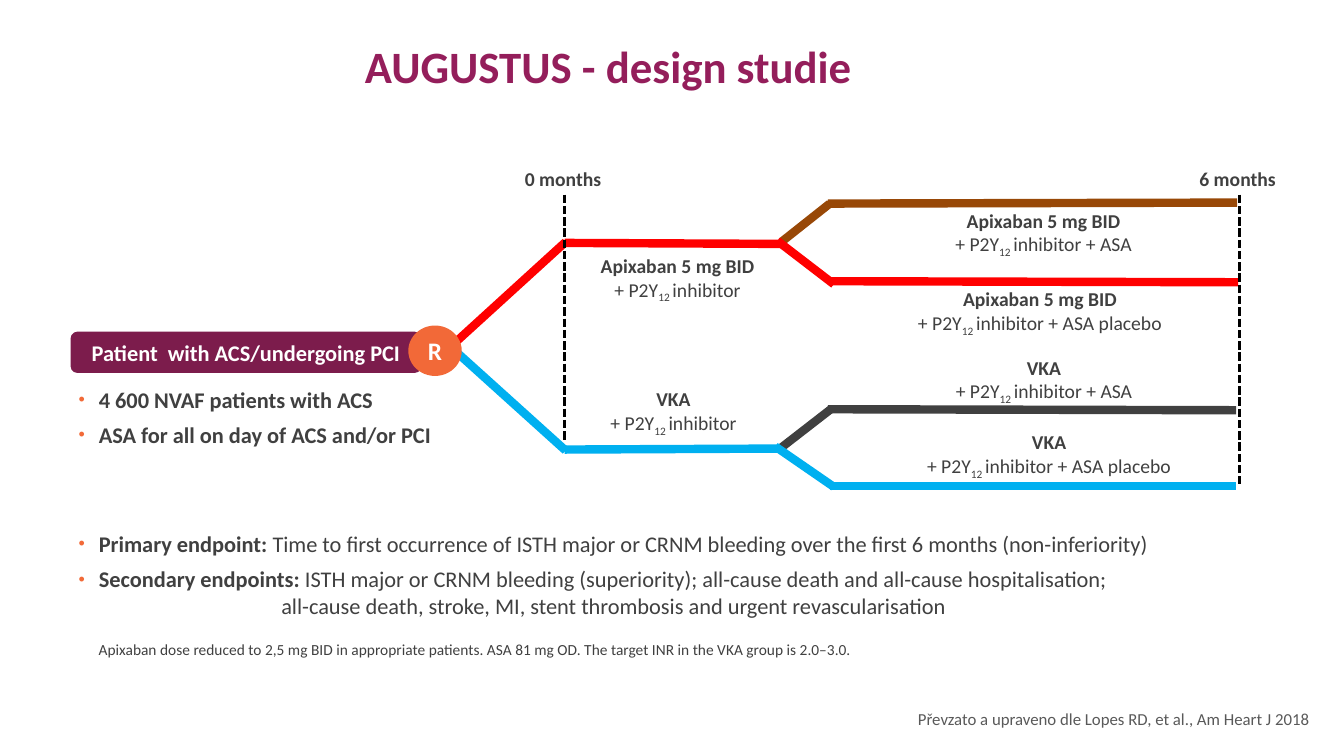
from dataclasses import dataclass

from lxml.etree import SubElement
from pptx import Presentation
from pptx.dml.color import RGBColor
from pptx.enum.dml import MSO_LINE
from pptx.enum.shapes import MSO_CONNECTOR, MSO_SHAPE
from pptx.enum.text import MSO_ANCHOR, MSO_AUTO_SIZE, PP_ALIGN
from pptx.oxml.ns import qn
from pptx.util import Emu, Pt

PX = 9144  # 100 px to the inch


@dataclass(frozen=True)
class Theme:
    font: str = "Calibri"
    title: str = "941E5B"
    text: str = "404040"
    source: str = "595959"
    white: str = "FFFFFF"
    black: str = "000000"
    patient: str = "7C1C4C"
    randomisation: str = "F26938"
    bullet: str = "F26A38"
    red: str = "FF0000"
    blue: str = "00B0F0"
    brown: str = "984807"
    title_size: int = 32
    circle_size: int = 18
    list_size: int = 16
    label_size: int = 14
    gap_size: int = 8
    source_size: int = 12
    note_size: int = 11


THEME = Theme()

# Colour, start and end of every treatment arm segment
BRANCHES = [
    (THEME.red, (448, 343), (561, 240)),
    (THEME.red, (560, 241), (776, 242)),
    (THEME.blue, (448, 345), (561, 447)),
    (THEME.blue, (560, 446), (774, 445)),
    (THEME.brown, (775, 240), (823, 202)),
    (THEME.brown, (821, 202), (1227, 201)),
    (THEME.red, (771, 239), (827, 282)),
    (THEME.red, (823, 279), (1228, 280)),
    (THEME.text, (775, 444), (824, 406)),
    (THEME.text, (821, 406), (1226, 407)),
    (THEME.blue, (769, 443), (827, 483)),
    (THEME.blue, (823, 482), (1226, 482)),
]

# Time point, position across, lower end of its dashed line
TIME_POINTS = [("0 months", 560, 437), ("6 months", 1229, 480)]

# Drug, partner therapy after P2Y12, label box
ARM_LABELS = [
    ("Apixaban 5 mg BID", "inhibitor", (585, 247, 174, 57)),
    ("VKA", "inhibitor", (594, 379, 148, 57)),
    ("Apixaban 5 mg BID", "inhibitor + ASA", (929, 202, 212, 57)),
    ("Apixaban 5 mg BID", "inhibitor + ASA placebo", (895, 280, 273, 57)),
    ("VKA", "inhibitor + ASA", (934, 348, 203, 57)),
    ("VKA", "inhibitor + ASA placebo", (904, 422, 273, 57)),
]

PATIENTS = [
    [("4 600 NVAF patients with ACS", True)],
    [("ASA for all on day of ACS and/or PCI", True)],
]
ENDPOINTS = [
    [("Primary endpoint: ", True),
     ("Time to first occurrence of ISTH major or CRNM bleeding "
      "over the first 6 months (non-inferiority)", False)],
    [("Secondary endpoints: ", True),
     ("ISTH major or CRNM bleeding (superiority); "
      "all-cause death and all-cause hospitalisation;", False)],
]
ENDPOINTS_CONTINUED = "all-cause death, stroke, MI, stent thrombosis and urgent revascularisation"


def px(*lengths):
    return [Emu(length * PX) for length in lengths]


def format_run(run, size, color, bold=False):
    run.font.name = THEME.font
    run.font.size = Pt(size)
    run.font.bold = bold
    run.font.color.rgb = RGBColor.from_string(color)


def add_run(paragraph, text, size=THEME.label_size, bold=False):
    run = paragraph.add_run()
    run.text = text
    format_run(run, size, THEME.text, bold)
    return run


def set_text(shape, text, size, color, bold=False, align=PP_ALIGN.LEFT):
    paragraph = shape.text_frame.paragraphs[0]
    paragraph.text = text
    paragraph.alignment = align
    format_run(paragraph.runs[0], size, color, bold)
    return paragraph


def place(shape, box):
    shape.left, shape.top, shape.width, shape.height = px(*box)


def add_text_box(slide, box, wrap=True, anchor=MSO_ANCHOR.TOP):
    shape = slide.shapes.add_textbox(*px(*box))
    shape.text_frame.word_wrap = wrap
    shape.text_frame.vertical_anchor = anchor
    return shape


def add_line(slide, start, end, color, width, dash=None):
    connector = slide.shapes.add_connector(MSO_CONNECTOR.STRAIGHT, *px(*start, *end))
    connector.line.color.rgb = RGBColor.from_string(color)
    connector.line.width = Pt(width)
    if dash:
        connector.line.dash_style = dash
    SubElement(connector._element.spPr, qn("a:effectLst"))


def add_filled_shape(slide, kind, box, fill, text, size):
    shape = slide.shapes.add_shape(kind, *px(*box))
    shape.shadow.inherit = False
    shape.fill.solid()
    shape.fill.fore_color.rgb = RGBColor.from_string(fill)
    shape.line.fill.background()
    shape.text_frame.vertical_anchor = MSO_ANCHOR.MIDDLE
    set_text(shape, text, size, THEME.white, True, PP_ALIGN.CENTER)


def add_arm_label(slide, drug, therapy, box):
    shape = add_text_box(slide, box, wrap=False)
    set_text(shape, drug, THEME.label_size, THEME.text, True, PP_ALIGN.CENTER)
    paragraph = shape.text_frame.add_paragraph()
    paragraph.alignment = PP_ALIGN.CENTER
    add_run(paragraph, "+ P2Y")
    subscript = add_run(paragraph, "12")
    subscript.font._element.set("baseline", "-25000")
    add_run(paragraph, " ", THEME.gap_size)
    add_run(paragraph, therapy)


def set_indent(paragraph, margin, hanging=0):
    properties = paragraph._p.get_or_add_pPr()
    properties.set("marL", str(margin * PX))
    properties.set("indent", str(-hanging * PX))
    return properties


def add_bullet(paragraph):
    properties = set_indent(paragraph, 20, hanging=20)
    color = SubElement(properties, qn("a:buClr"))
    SubElement(color, qn("a:srgbClr"), val=THEME.bullet)
    SubElement(properties, qn("a:buSzPct"), val="80000")
    SubElement(properties, qn("a:buChar"), char="•")


def fill_list(placeholder, box, items, wrap=True):
    place(placeholder, box)
    text_frame = placeholder.text_frame
    text_frame.auto_size = MSO_AUTO_SIZE.NONE
    text_frame.word_wrap = wrap
    for index, item in enumerate(items):
        paragraph = text_frame.add_paragraph() if index else text_frame.paragraphs[0]
        add_bullet(paragraph)
        paragraph.space_before = Pt(6 if index else 0)
        for text, bold in item:
            add_run(paragraph, text, THEME.list_size, bold)


def continue_list(placeholder, text):
    paragraph = placeholder.text_frame.add_paragraph()
    SubElement(set_indent(paragraph, 201), qn("a:buNone"))
    paragraph.space_before = Pt(0)
    add_run(paragraph, text, THEME.list_size)


def main():
    presentation = Presentation()
    presentation.slide_width, presentation.slide_height = px(1333, 750)
    slide = presentation.slides.add_slide(presentation.slide_layouts[3])
    title, patients, endpoints = slide.placeholders

    # Title and lists
    place(title, (26, 29, 1155, 82))
    heading = set_text(title, "AUGUSTUS - design studie", THEME.title_size,
                       THEME.title, True, PP_ALIGN.CENTER)
    heading.line_spacing = 0.8
    fill_list(patients, (68, 378, 374, 72), PATIENTS, wrap=False)
    fill_list(endpoints, (68, 521, 1100, 99), ENDPOINTS)
    continue_list(endpoints, ENDPOINTS_CONTINUED)

    # Treatment arms and time points
    for color, start, end in BRANCHES:
        add_line(slide, start, end, color, 6)
    for text, x, bottom in TIME_POINTS:
        add_line(slide, (x, 193), (x, bottom), THEME.black, 2, MSO_LINE.SQUARE_DOT)
        label = add_text_box(slide, (x - 50, 161, 97, 34), wrap=False)
        set_text(label, text, THEME.label_size, THEME.text, True, PP_ALIGN.CENTER)
    for drug, therapy, box in ARM_LABELS:
        add_arm_label(slide, drug, therapy, box)

    # Patients and randomisation
    add_filled_shape(slide, MSO_SHAPE.ROUNDED_RECTANGLE, (70, 329, 348, 41),
                     THEME.patient, "Patient  with ACS/undergoing PCI", THEME.list_size)
    add_filled_shape(slide, MSO_SHAPE.OVAL, (405, 323, 53, 50),
                     THEME.randomisation, "R", THEME.circle_size)

    # Dose note and source
    note = add_text_box(slide, (88, 630, 1221, 31))
    set_text(note, "Apixaban dose reduced to 2,5 mg BID in appropriate patients. ASA 81 mg OD. "
             "The target INR in the VKA group is 2.0–3.0.", THEME.note_size, THEME.text)
    source = add_text_box(slide, (5, 677, 1304, 73), anchor=MSO_ANCHOR.MIDDLE)
    set_text(source, "Převzato a upraveno dle Lopes RD, et al., Am Heart J 2018",
             THEME.source_size, THEME.source, align=PP_ALIGN.RIGHT)

    presentation.save("out.pptx")


if __name__ == "__main__":
    main()
